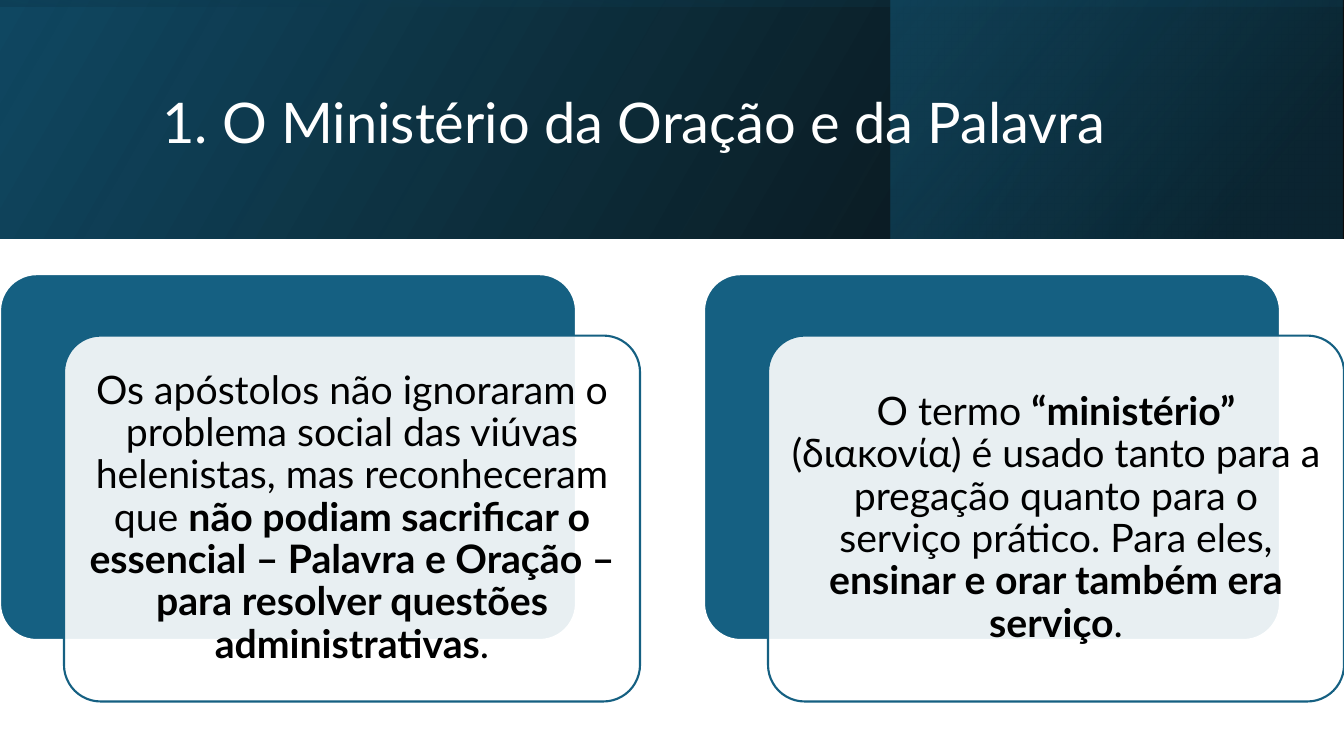
import pptx
import pptx.util
import pptx.oxml
import pptx.oxml.ns
import pptx.dml.color
import pptx.enum.shapes
import pptx.enum.text

In, Pt = pptx.util.Inches, pptx.util.Pt
SHAPE = pptx.enum.shapes.MSO_SHAPE
ALIGN = pptx.enum.text.PP_ALIGN
MIDDLE = pptx.enum.text.MSO_ANCHOR.MIDDLE

W, H = 13.33, 7.5
UNIT = W / 21  # each card is 9 units wide, shifted 1 unit, one card every 11
BANNER_H = 2.37
FONT = "Lato"
COLORS = {"black": "000000", "white": "FFFFFF", "blue": "156082",
          "deep": "104862", "night": "0B3041"}

TITLE = "1. O Ministério da Oração e da Palavra"
# Each card is a list of (text, bold) runs
CARDS = [
    [("Os apóstolos não ignoraram o problema social das viúvas helenistas, "
      "mas reconheceram que ", False),
     ("não podiam sacrificar o essencial – Palavra e Oração – para resolver "
      "questões administrativas", True),
     (".", False)],
    [("O termo ", False),
     ("“ministério”", True),
     (" (διακονία) é usado tanto para a pregação quanto para o serviço "
      "prático. Para eles, ", False),
     ("ensinar e orar também era serviço", True),
     (".", False)],
]


def rgb(name):
    return pptx.dml.color.RGBColor.from_string(COLORS[name])


def add_gradient_rect(shapes, box, stops, angle, rotation=0):
    """Mirrored rectangle; stops are (position %, colour, opacity %)."""
    sp = shapes.add_shape(SHAPE.RECTANGLE, *map(In, box))
    sp.shadow.inherit = False
    sp.line.fill.background()
    sp.rotation = rotation
    spPr = sp._element.spPr
    spPr.xfrm.set("flipH", "1")
    gs = "".join(
        f'<a:gs pos="{pos * 1000}"><a:srgbClr val="{COLORS[color]}">'
        f'<a:alpha val="{alpha * 1000}"/></a:srgbClr></a:gs>'
        for pos, color, alpha in stops)
    grad = pptx.oxml.parse_xml(
        f'<a:gradFill {pptx.oxml.ns.nsdecls("a")} rotWithShape="1">'
        f'<a:gsLst>{gs}</a:gsLst>'
        f'<a:lin ang="{angle * 60000}" scaled="0"/></a:gradFill>')
    spPr.find(pptx.oxml.ns.qn("a:prstGeom")).addnext(grad)


def add_text(shapes, box, runs, size, color, align, inset=None):
    tf = shapes.add_textbox(*map(In, box)).text_frame
    tf.word_wrap = True
    tf.vertical_anchor = MIDDLE
    if inset is not None:
        tf.margin_left = tf.margin_right = In(inset)
        tf.margin_top = tf.margin_bottom = In(inset)
    p = tf.paragraphs[0]
    p.alignment = align
    p.line_spacing = 0.9
    for text, bold in runs:
        r = p.add_run()
        r.text = text
        r.font.name = FONT
        r.font.size = Pt(size)
        r.font.bold = bold
        r.font.color.rgb = rgb(color)


def add_banner(shapes, x, y, w, h):
    add_gradient_rect(shapes, (x, y, w, h),
                      [(0, "black", 96), (100, "deep", 100)], 330)
    add_gradient_rect(shapes, (x + w * 0.663, y, w * 0.336, h),
                      [(19, "night", 68), (100, "blue", 48)], 320)
    # A quarter turn about the centre makes this tall shape fill the banner
    add_gradient_rect(shapes, (x + (w - h) / 2, y + (h - w) / 2, h, w),
                      [(23, "deep", 16), (99, "black", 45)], 350, 270)
    add_text(shapes, (x + 1.51, y + 0.38, 10.63, 1.72), [(TITLE, False)],
             40, "white", ALIGN.LEFT)


def add_panel(shapes, box, fill, line, alpha=100):
    sp = shapes.add_shape(SHAPE.ROUNDED_RECTANGLE, *map(In, box))
    sp.adjustments[0] = 0.1
    sp.shadow.inherit = False
    sp.fill.solid()
    sp.fill.fore_color.rgb = rgb(fill)
    sp.line.color.rgb = rgb(line)
    sp.line.width = Pt(1.5)
    if alpha < 100:
        clr = sp._element.spPr.find(
            pptx.oxml.ns.qn("a:solidFill")).find(pptx.oxml.ns.qn("a:srgbClr"))
        clr.append(pptx.oxml.parse_xml(
            f'<a:alpha {pptx.oxml.ns.nsdecls("a")} val="{alpha * 1000}"/>'))


def add_card(shapes, x, y, w, h, runs):
    """Blue panel with a translucent text panel shifted down and right."""
    add_panel(shapes, (x, y, w, h), "blue", "white")
    x, y = x + UNIT, y + 0.96 * UNIT
    add_panel(shapes, (x, y, w, h), "white", "blue", 90)
    pad = 0.106
    add_text(shapes, (x + pad, y + pad, w - 2 * pad, h - 2 * pad), runs,
             28, "black", ALIGN.CENTER, 0.12)


def main():
    prs = pptx.Presentation()
    prs.slide_width, prs.slide_height = In(W), In(H)
    s = prs.slides.add_slide(prs.slide_layouts[6])
    add_banner(s.shapes, 0, 0, W, BANNER_H)
    cards = s.shapes.add_group_shape().shapes
    for i, runs in enumerate(CARDS):
        add_card(cards, 11 * UNIT * i, 2.72, 9 * UNIT, 3.63, runs)
    prs.save("out.pptx")


if __name__ == "__main__":
    main()
